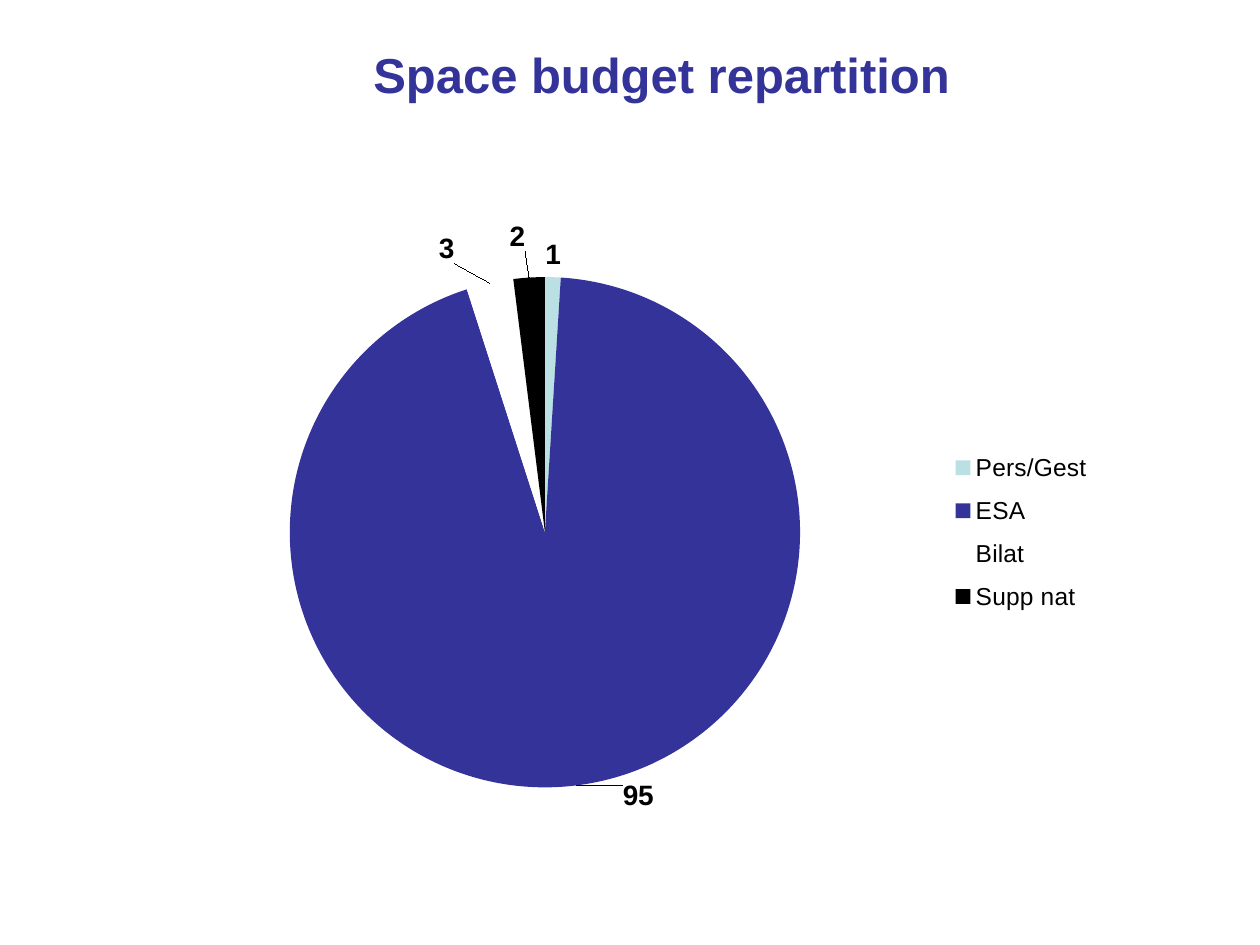
from lxml import etree
from pptx import Presentation
from pptx import util as u
from pptx.chart.data import CategoryChartData
from pptx.dml.color import RGBColor
from pptx.enum import chart as ch, text
from pptx.oxml import ns

NAVY = RGBColor(0x33, 0x33, 0x99)
PALE = RGBColor(0xBB, 0xE0, 0xE3)
WHITE = RGBColor(0xFF, 0xFF, 0xFF)
BLACK = RGBColor(0, 0, 0)
FONT = "Arial"

# Category, value, colour, label offset as a share of the chart
SLICES = [
    ("Pers/Gest", 1, PALE, None),
    ("ESA", 95, NAVY, (0.04, -0.02)),
    ("Bilat", 3, WHITE, (-0.03, -0.02)),
    ("Supp nat", 2, BLACK, (-0.01, -0.03)),
]


def set_font(font, size, color=BLACK, bold=False):
    font.name, font.size, font.bold = FONT, u.Pt(size), bold
    font.color.rgb = color


def add_text(s, box, content, size, color=BLACK, bold=False, indent=0,
             align=text.PP_ALIGN.CENTER):
    tf = s.shapes.add_textbox(*map(u.Pt, box)).text_frame
    tf.word_wrap = True
    tf.vertical_anchor = text.MSO_ANCHOR.TOP
    tf.margin_left = u.Pt(7.2 + indent)
    p = tf.paragraphs[0]
    p.alignment = align
    r = p.add_run()
    r.text = content
    set_font(r.font, size, color, bold)


def make_layout(**values):
    """Manual chart layout, in shares of the chart area."""
    layout = etree.Element(ns.qn("c:layout"))
    manual = etree.SubElement(layout, ns.qn("c:manualLayout"))
    for name, value in values.items():
        etree.SubElement(manual, ns.qn("c:" + name), val=str(value))
    return layout


def add_title(s, box):
    add_text(s, box, "Space budget repartition", 28, NAVY, True, indent=36)


def add_pie(s, box):
    data = CategoryChartData(number_format="0")
    data.categories = [name for name, *_ in SLICES]
    data.add_series("Series 1", [value for _, value, *_ in SLICES])
    chart = s.shapes.add_chart(ch.XL_CHART_TYPE.PIE, *map(u.Pt, box), data).chart
    chart.has_title = False
    set_font(chart.font, 10)

    # Plot position
    plot_area = chart.plots[0]._element.getparent()
    for old in plot_area.findall(ns.qn("c:layout")):
        plot_area.remove(old)
    plot_area.insert(0, make_layout(
        layoutTarget="inner", xMode="edge", yMode="edge",
        x=0.2, y=0.09, w=0.45, h=0.82))

    # Legend
    chart.has_legend = True
    legend = chart.legend
    legend.position = ch.XL_LEGEND_POSITION.RIGHT
    legend.include_in_layout = False
    set_font(legend.font, 14)
    legend._element.find(ns.qn("c:legendPos")).addnext(make_layout(
        xMode="edge", yMode="edge", x=0.77, y=0.35, w=0.15, h=0.3))

    # Slices and their values
    plot = chart.plots[0]
    plot.vary_by_categories = True
    series = plot.series[0]
    labels = series.data_labels
    labels.show_value = True
    labels.number_format, labels.number_format_is_linked = "0", False
    set_font(labels.font, 16, bold=True)
    for i, (_, _, color, offset) in enumerate(SLICES):
        point = series.points[i]
        point.format.fill.solid()
        point.format.fill.fore_color.rgb = color
        point.format.line.fill.background()
        label = point.data_label
        set_font(label.font, 16, bold=True)
        label.position = ch.XL_LABEL_POSITION.OUTSIDE_END
        if offset:
            idx = labels._element.findall(ns.qn("c:dLbl"))[i].find(ns.qn("c:idx"))
            idx.addnext(make_layout(x=offset[0], y=offset[1]))


def main():
    prs = Presentation()
    prs.slide_width, prs.slide_height = u.Pt(720), u.Pt(540)
    s = prs.slides.add_slide(prs.slide_layouts[6])
    add_title(s, (36, 21.6, 648, 90))
    add_pie(s, (36, 126, 648, 356.4))
    prs.save("out.pptx")


if __name__ == "__main__":
    main()
